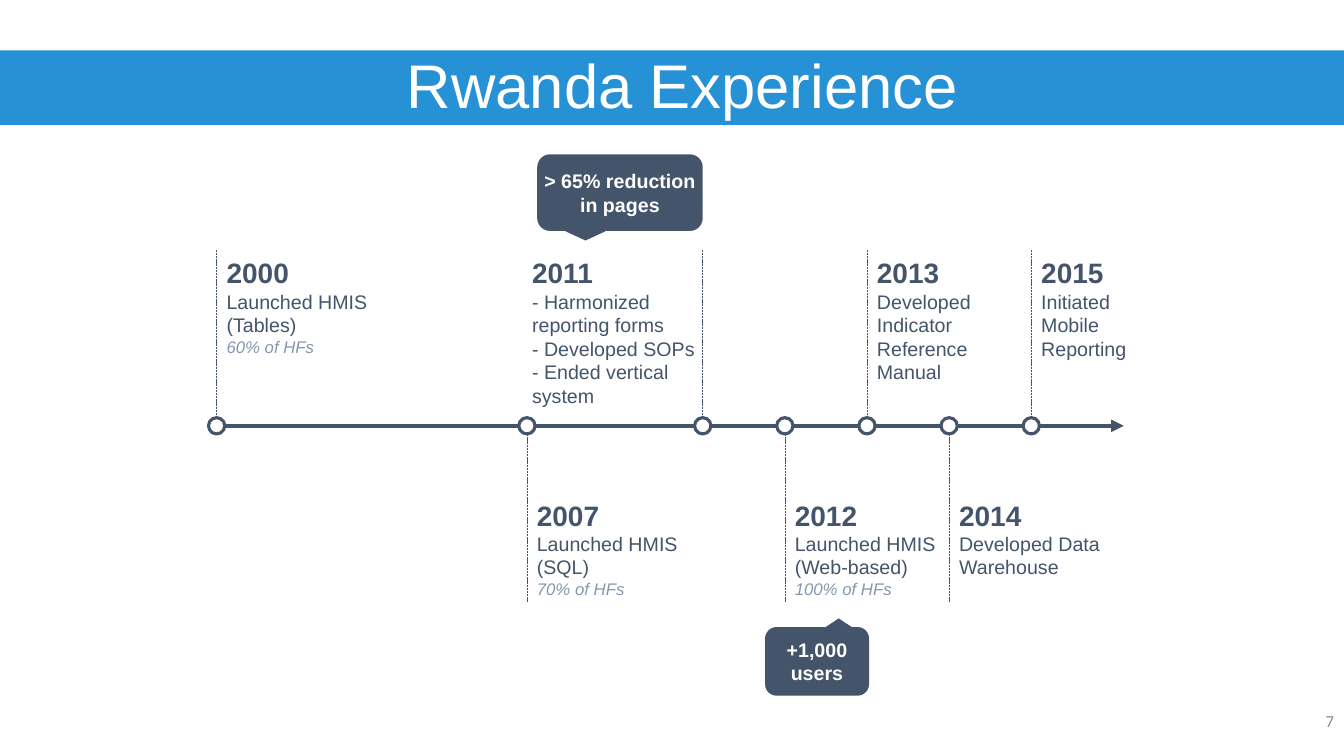
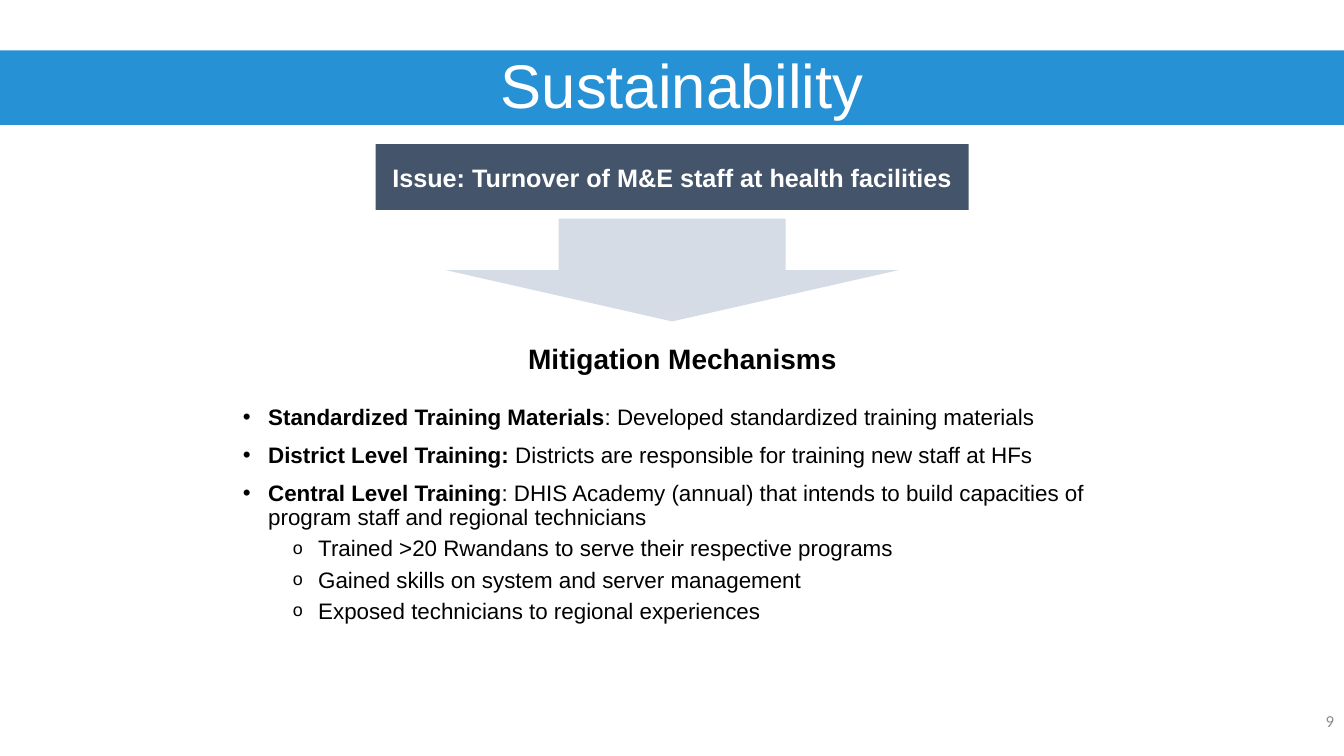
from collections import namedtuple

from lxml import etree
from pptx import Presentation
from pptx import util as u
from pptx.dml.color import RGBColor
from pptx.enum import dml, shapes, text
from pptx.oxml.ns import qn

BLUE, SLATE, MUTED = "2791D5", "44546A", "8497B0"
PALE, GREY, WHITE, BLACK = "D6DCE5", "8C8C8C", "FFFFFF", "000000"
SLIDE_W, SLIDE_H = 33.87, 19.05

Box = namedtuple("Box", "left top width height")
Milestone = namedtuple("Milestone", "offset above year lines share shift width",
                       defaults=("", 0, 4.19))

FIRST_YEARLY, YEAR_STEP = 12.25, 2.07
MILESTONES = [
    Milestone(0, True, "2000", ["Launched HMIS (Tables)"], "60% of HFs"),
    Milestone(7.82, False, "2007", ["Launched HMIS (SQL)"], "70% of HFs"),
    Milestone(FIRST_YEARLY, True, "2011",
              ["- Harmonized reporting forms", "- Developed SOPs",
               "- Ended vertical system"], shift=-4.55, width=4.65),
    Milestone(FIRST_YEARLY + YEAR_STEP, False, "2012",
              ["Launched HMIS (Web-based)"], "100% of HFs"),
    Milestone(FIRST_YEARLY + 2 * YEAR_STEP, True, "2013",
              ["Developed Indicator Reference Manual"]),
    Milestone(FIRST_YEARLY + 3 * YEAR_STEP, False, "2014",
              ["Developed Data Warehouse"]),
    Milestone(FIRST_YEARLY + 4 * YEAR_STEP, True, "2015",
              ["Initiated Mobile Reporting"], width=3.71),
]
MECHANISMS = [
    ("Standardized Training Materials",
     ": Developed standardized training materials"),
    ("District Level Training:",
     " Districts are responsible for training new staff at HFs"),
    ("Central Level Training",
     ": DHIS Academy (annual) that intends to build capacities of "
     "program staff and regional technicians"),
]
RESULTS = [
    "Trained >20 Rwandans to serve their respective programs",
    "Gained skills on system and server management",
    "Exposed technicians to regional experiences",
]


def color(hex_code):
    """Turn a hex string into a colour."""
    return RGBColor.from_string(hex_code)


def cm(box):
    """Give the four lengths of a box in centimetres."""
    return [u.Cm(length) for length in box]


def add_run(paragraph, words, size, ink, bold=False, italic=False, face="Arial"):
    """Append one formatted run."""
    run = paragraph.add_run()
    run.text = words
    run.font.name, run.font.size = face, u.Pt(size)
    run.font.bold, run.font.italic = bold, italic
    run.font.color.rgb = color(ink)


def add_frame(slide, box, anchor=text.MSO_ANCHOR.TOP, insets=(0.25, 0.13, 0.25, 0.13)):
    """Add a wrapping text box and return its frame."""
    frame = slide.shapes.add_textbox(*cm(box)).text_frame
    frame.word_wrap = True
    frame.vertical_anchor = anchor
    (frame.margin_left, frame.margin_top,
     frame.margin_right, frame.margin_bottom) = cm(insets)
    return frame


def add_line_of_text(slide, box, words, size, ink, align=text.PP_ALIGN.LEFT,
                     anchor=text.MSO_ANCHOR.MIDDLE, insets=(0.25, 0.13, 0.25, 0.13),
                     **style):
    """Add a text box holding one paragraph."""
    paragraph = add_frame(slide, box, anchor, insets).paragraphs[0]
    paragraph.alignment = align
    add_run(paragraph, words, size, ink, **style)
    return paragraph


def add_solid(slide, kind, box, fill, outline=None, weight=0):
    """Add a flat preset shape."""
    solid = slide.shapes.add_shape(kind, *cm(box))
    solid.shadow.inherit = False
    solid.fill.solid()
    solid.fill.fore_color.rgb = color(fill)
    if outline:
        solid.line.color.rgb = color(outline)
        solid.line.width = u.Pt(weight)
    else:
        solid.line.fill.background()
    return solid


def add_rule(slide, start, end, weight, dashed=False, arrow=False):
    """Add a straight slate line."""
    rule = slide.shapes.add_connector(shapes.MSO_CONNECTOR.STRAIGHT, *cm(start + end))
    rule.line.color.rgb = color(SLATE)
    rule.line.width = u.Pt(weight)
    if dashed:
        rule.line.dash_style = dml.MSO_LINE.SQUARE_DOT
    properties = rule._element.spPr
    if arrow:
        etree.SubElement(properties.find(qn("a:ln")), qn("a:tailEnd"), type="triangle")
    etree.SubElement(properties, qn("a:effectLst"))


def add_base(deck, title, number):
    """Add a slide with its title band and page number."""
    slide = deck.slides.add_slide(deck.slide_layouts[6])
    add_solid(slide, shapes.MSO_SHAPE.RECTANGLE, Box(0, 1.27, SLIDE_W, 1.88), BLUE)
    heading = add_line_of_text(slide, Box(2.34, 1.02, 29.21, 2.44), title, 44, WHITE,
                               text.PP_ALIGN.CENTER, insets=(1.02, 0.13, 0.51, 0.13))
    heading.line_spacing = 0.9
    add_line_of_text(slide, Box(SLIDE_W - 7.62, 17.65, 7.62, 1.02), number, 12, GREY,
                     text.PP_ALIGN.RIGHT, face="Calibri")
    return slide


def add_label(slide, box, milestone):
    """Write the year, event and coverage of a milestone."""
    frame = add_frame(slide, box)
    add_run(frame.paragraphs[0], milestone.year, 20, SLATE, bold=True)
    for event in milestone.lines:
        add_run(frame.add_paragraph(), event, 14, SLATE)
    if milestone.share:
        add_line_of_text(slide, Box(box.left, box.top + 2.03, 3.38, 0.76),
                         milestone.share, 12, MUTED, italic=True)


def add_timeline(slide, box):
    """Draw the axis with its milestones above and below."""
    axis, dot = box.top + box.height / 2, 0.41
    add_rule(slide, (box.left, axis), (box.left + box.width, axis), 3, arrow=True)
    for milestone in MILESTONES:
        x = box.left + milestone.offset
        side = -1 if milestone.above else 1
        add_rule(slide, (x, axis + side * box.height / 2),
                 (x, axis + side * dot / 2), 0.5, dashed=True)
        add_solid(slide, shapes.MSO_SHAPE.OVAL,
                  Box(x - dot / 2, axis - dot / 2, dot, dot), WHITE, SLATE, 2.25)
        label_top = box.top + (0.02 if milestone.above else 6.12)
        add_label(slide, Box(x + milestone.shift, label_top, milestone.width, 3.2),
                  milestone)


def add_callout(slide, box, words, rotation=0):
    """Add a speech bubble with upright text."""
    bubble = add_solid(slide, shapes.MSO_SHAPE.ROUNDED_RECTANGULAR_CALLOUT, box, SLATE)
    bubble.rotation = rotation
    add_line_of_text(slide, box, words, 14, WHITE, text.PP_ALIGN.CENTER,
                     insets=(0, 0.13, 0, 0.13), bold=True)


def add_issue(slide, box):
    """Show the issue above a down arrow."""
    issue = add_solid(slide, shapes.MSO_SHAPE.RECTANGLE, box._replace(height=1.66), SLATE)
    issue.text_frame.vertical_anchor = text.MSO_ANCHOR.MIDDLE
    paragraph = issue.text_frame.paragraphs[0]
    paragraph.alignment = text.PP_ALIGN.CENTER
    add_run(paragraph, "Issue: Turnover of M&E staff at health facilities",
            18, WHITE, bold=True)
    arrow_w, arrow_h = 11.43, 2.59
    add_solid(slide, shapes.MSO_SHAPE.DOWN_ARROW,
              Box(box.left + (box.width - arrow_w) / 2,
                  box.top + box.height - arrow_h, arrow_w, arrow_h), PALE)


def add_bullet(frame, mark, indent, before, scale=100):
    """Add a paragraph with a hanging bullet."""
    paragraph = frame.add_paragraph()
    properties = paragraph._p.get_or_add_pPr()
    properties.set("marL", str(u.Cm(indent)))
    properties.set("indent", str(-u.Cm(0.64)))
    etree.SubElement(properties, qn("a:buSzPct"), val=str(scale * 1000))
    etree.SubElement(properties, qn("a:buFont"), typeface="Arial")
    etree.SubElement(properties, qn("a:buChar"), char=mark)
    paragraph.line_spacing, paragraph.space_before = 0.9, u.Pt(before)
    paragraph.font.size = u.Pt(16)
    return paragraph


def add_mechanisms(slide, box):
    """List the mitigation mechanisms and their results."""
    frame = add_frame(slide, box)
    heading = frame.paragraphs[0]
    heading.alignment = text.PP_ALIGN.CENTER
    heading.line_spacing, heading.space_after = 0.9, u.Pt(12)
    add_run(heading, "Mitigation Mechanisms", 20, BLACK, bold=True)
    for name, detail in MECHANISMS:
        mechanism = add_bullet(frame, "•", 0.64, 10)
        add_run(mechanism, name, 16, BLACK, bold=True)
        add_run(mechanism, detail, 16, BLACK)
    for result in RESULTS:
        add_run(add_bullet(frame, "o", 1.9, 5, 80), result, 16, BLACK)


def main():
    """Build and save the deck."""
    deck = Presentation()
    deck.slide_width, deck.slide_height = u.Cm(SLIDE_W), u.Cm(SLIDE_H)

    experience = add_base(deck, "Rwanda Experience", "7")
    add_timeline(experience, Box(5.46, 6.3, 22.86, 8.86))
    add_callout(experience, Box(19.28, 15.8, 2.62, 1.73), "+1,000 users", 180)
    add_callout(experience, Box(13.54, 3.89, 4.17, 1.93), "> 65% reduction in pages")

    sustainability = add_base(deck, "Sustainability", "9")
    add_mechanisms(sustainability, Box(5.87, 8.56, 22.66, 10.49))
    add_issue(sustainability, Box(9.47, 3.63, 14.94, 4.47))

    deck.save("out.pptx")


if __name__ == "__main__":
    main()
